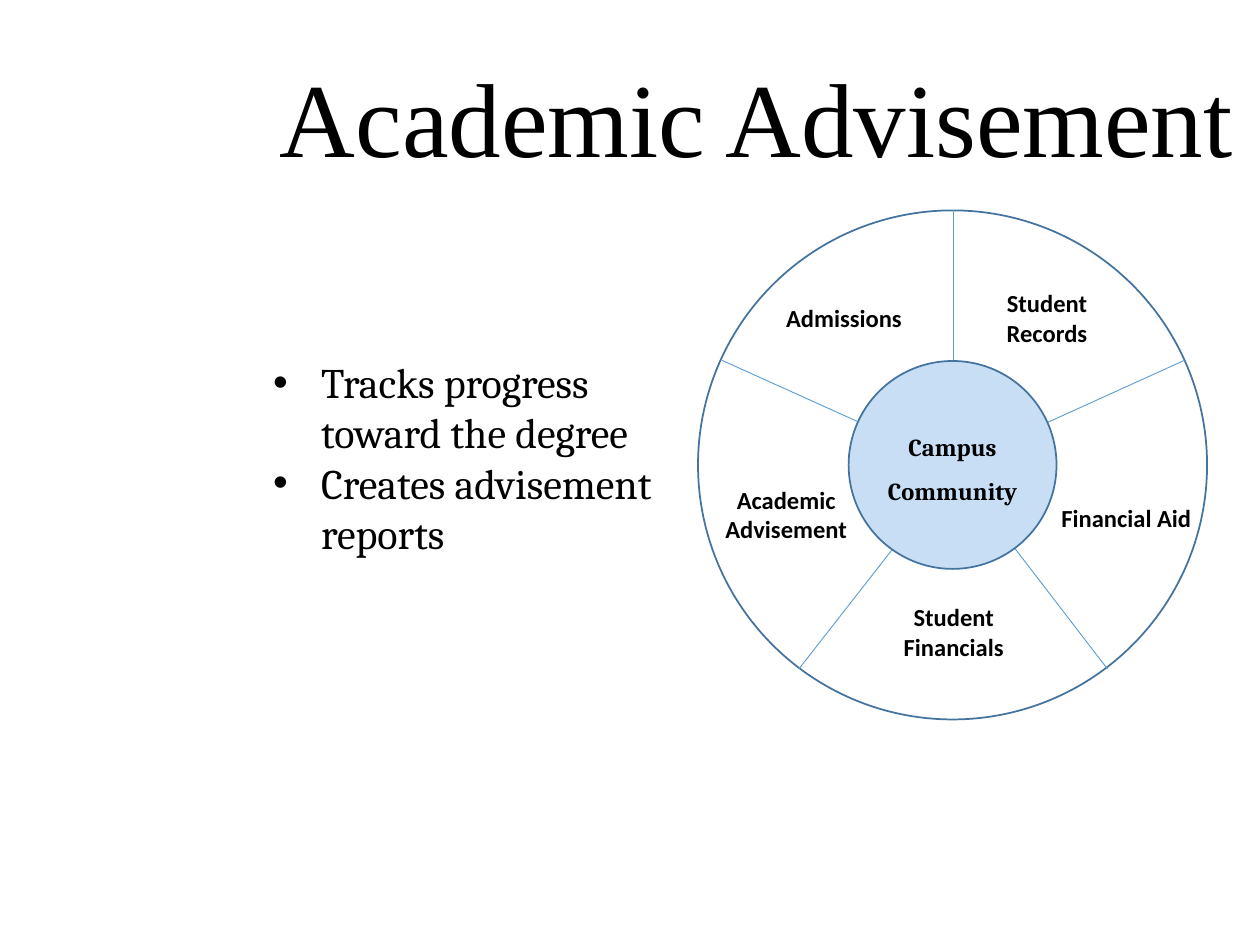
from lxml import etree
from pptx import Presentation
from pptx.dml.color import RGBColor
from pptx.enum.shapes import MSO_CONNECTOR, MSO_SHAPE
from pptx.enum.text import PP_ALIGN
from pptx.oxml.ns import qn
from pptx.util import Inches, Pt

STRAIGHT = MSO_CONNECTOR.STRAIGHT
OVAL = MSO_SHAPE.OVAL
LEFT, CENTER = PP_ALIGN.LEFT, PP_ALIGN.CENTER

COLORS = {
    "text": "000000",
    "wheel": "FFFFFF",
    "hub": "C8DEF5",
    "outline": "43739E",
    "spoke": "5B9BD5",
}
CENTER_X, CENTER_Y = 7.56, 3.69
WHEEL_RADIUS, HUB_RADIUS = 2.02, 0.825

# Rim point and inner end of each spoke
SPOKES = [
    ((5.73, 2.86), (7.57, 3.69)),
    ((7.57, 1.67), (7.57, 3.69)),
    ((9.4, 2.86), (7.57, 3.69)),
    ((8.79, 5.31), (7.5, 3.63)),
    ((6.34, 5.31), (7.63, 3.66)),
]
# Text, box and alignment of each sector
SECTORS = [
    ("Admissions", (6.14, 2.36, 1.21, 0.34), LEFT),
    ("Academic Advisement", (5.49, 3.8, 1.5, 0.57), CENTER),
    ("Student Financials", (6.82, 4.73, 1.5, 0.57), CENTER),
    ("Financial Aid", (8.19, 3.94, 1.5, 0.34), CENTER),
    ("Student Records", (7.56, 2.24, 1.5, 0.57), CENTER),
]


def color(name):
    return RGBColor.from_string(COLORS[name])


def add_bullet(paragraph, indent):
    properties = paragraph._p.get_or_add_pPr()
    properties.set("marL", str(Inches(indent)))
    properties.set("indent", str(-Inches(indent)))
    font = etree.SubElement(properties, qn("a:buFont"))
    font.set("typeface", "Arial")
    bullet = etree.SubElement(properties, qn("a:buChar"))
    bullet.set("char", "•")


def add_text(slide, lines, box, font, size, bold=False, align=LEFT,
             spacing=None, bulleted=False):
    shape = slide.shapes.add_textbox(*map(Inches, box))
    frame = shape.text_frame
    frame.word_wrap = True
    for index, line in enumerate(lines):
        paragraph = frame.add_paragraph() if index else frame.paragraphs[0]
        paragraph.alignment = align
        if spacing:
            paragraph.line_spacing = spacing
        if bulleted:
            add_bullet(paragraph, 0.38)
        run = paragraph.add_run()
        run.text = line
        run.font.name = font
        run.font.size = Pt(size)
        run.font.bold = bold
        run.font.color.rgb = color("text")


def add_circle(slide, radius, fill):
    shape = slide.shapes.add_shape(
        OVAL, Inches(CENTER_X - radius), Inches(CENTER_Y - radius),
        Inches(2 * radius), Inches(2 * radius))
    shape.shadow.inherit = False
    shape.fill.solid()
    shape.fill.fore_color.rgb = color(fill)
    shape.line.color.rgb = color("outline")
    shape.line.width = Pt(1)


def add_spoke(slide, rim, inner):
    connector = slide.shapes.add_connector(STRAIGHT, *map(Inches, rim + inner))
    connector.line.color.rgb = color("spoke")
    connector.line.width = Pt(0.5)
    etree.SubElement(connector._element.spPr, qn("a:effectLst"))


def main():
    presentation = Presentation()
    presentation.slide_width = Inches(10)
    presentation.slide_height = Inches(7.5)
    slide = presentation.slides.add_slide(presentation.slide_layouts[6])

    # Bulleted points
    add_text(slide,
             ["Tracks progress toward the degree", "Creates advisement reports"],
             (2.07, 2.78, 3.42, 1.72), "Cambria", 24, bulleted=True)

    # Wheel, with the hub over the inner ends of the spokes
    add_circle(slide, WHEEL_RADIUS, "wheel")
    for rim, inner in SPOKES:
        add_spoke(slide, rim, inner)
    add_circle(slide, HUB_RADIUS, "hub")
    add_text(slide, ["Campus Community"], (6.82, 3.26, 1.48, 0.76),
             "Cambria", 14, bold=True, align=CENTER, spacing=1.5)
    for label, box, align in SECTORS:
        add_text(slide, [label], box, "Calibri", 14, bold=True, align=align)

    # Title
    add_text(slide, ["Academic Advisement"], (2.01, 0.37, 7.99, 1.11),
             "Times New Roman", 60, align=CENTER)

    presentation.save("out.pptx")


if __name__ == "__main__":
    main()
